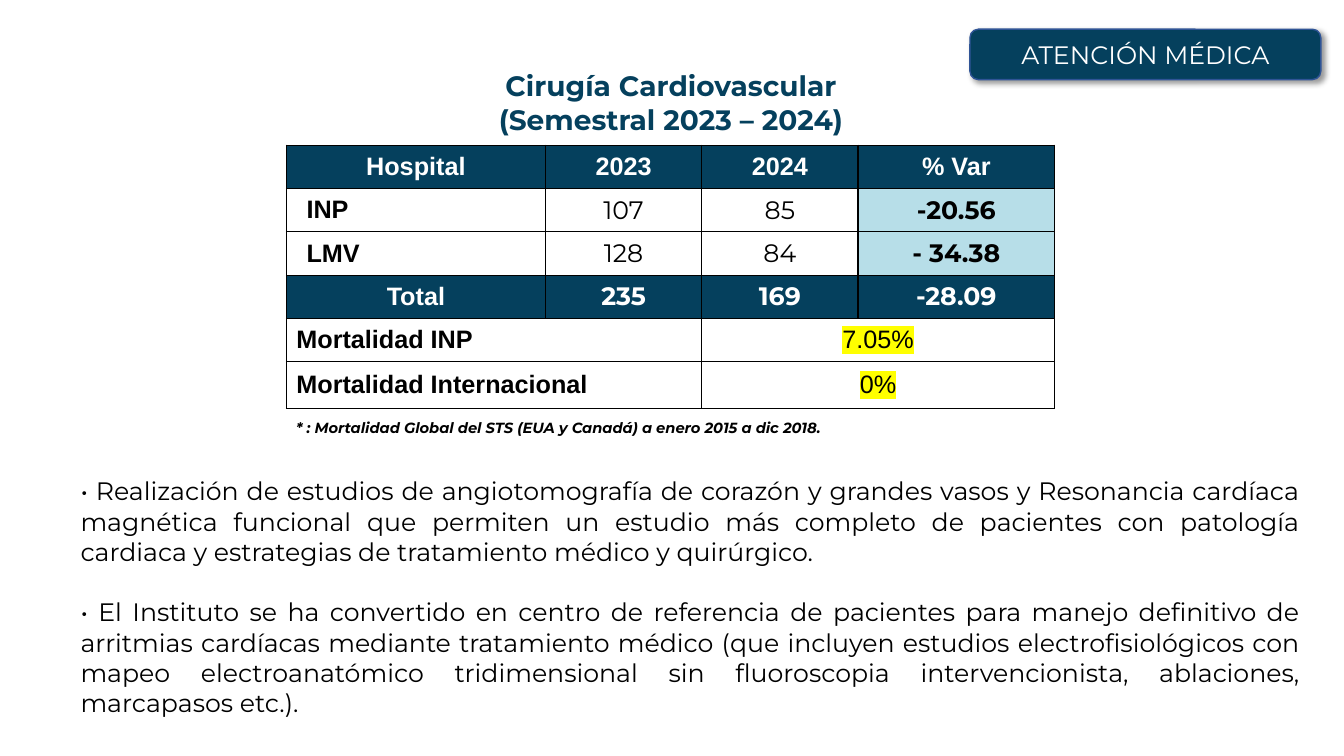
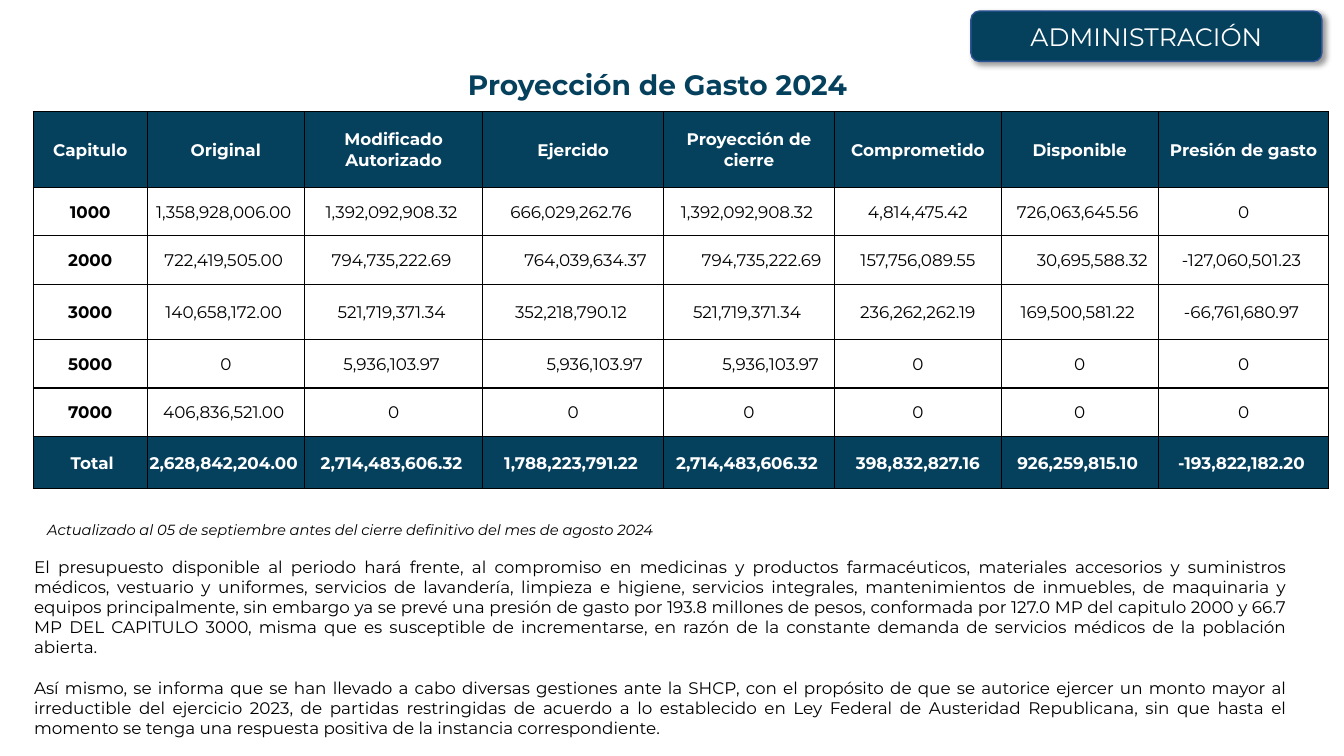
from dataclasses import dataclass
from typing import NamedTuple

from lxml import etree
from pptx import Presentation
from pptx.dml.color import RGBColor
from pptx.enum.shapes import MSO_SHAPE
from pptx.enum.text import MSO_ANCHOR, PP_ALIGN
from pptx.oxml.ns import qn
from pptx.util import Emu, Pt

ROUNDED = MSO_SHAPE.ROUNDED_RECTANGLE
LEFT, CENTER, JUSTIFY = PP_ALIGN.LEFT, PP_ALIGN.CENTER, PP_ALIGN.JUSTIFY
TOP, MIDDLE = MSO_ANCHOR.TOP, MSO_ANCHOR.MIDDLE
EMU_PER_PX = 9144


@dataclass(frozen=True)
class Theme:
    """Colours, fonts and type sizes shared by the slides."""
    navy: str = "05405D"
    badge_line: str = "2F5496"
    pale_blue: str = "B7DEE8"
    yellow: str = "FFFF00"
    white: str = "FFFFFF"
    black: str = "000000"
    font: str = "Montserrat"
    label_font: str = "Arial"
    title_size: float = 20
    large_size: float = 18
    small_size: float = 12
    note_size: float = 10.5


THEME = Theme()


class Box(NamedTuple):
    """A rectangle in px."""
    left: int
    top: int
    width: int
    height: int


class TextStyle(NamedTuple):
    """The look of a paragraph."""
    size: float
    color: str = THEME.black
    bold: bool = False
    italic: bool = False
    align: PP_ALIGN = LEFT
    font: str = THEME.font
    space_between: float = 0


class CellStyle(NamedTuple):
    """The look of a table cell; margins run left, top, right, bottom in px."""
    text: TextStyle
    margins: tuple
    fill: str = THEME.white
    highlight: str = ""


def px(length):
    """Turn px into EMU."""
    return Emu(length * EMU_PER_PX)


def rgb(color):
    """Turn a hex string into a colour."""
    return RGBColor.from_string(color)


def add_color(parent, tag, color):
    """Append an element that holds one colour and return the colour element."""
    holder = etree.SubElement(parent, qn(tag))
    return etree.SubElement(holder, qn("a:srgbClr"), val=color)


def write_text(frame, paragraphs, style, anchor=TOP):
    """Fill a text frame with paragraphs of one style."""
    frame.word_wrap = True
    frame.vertical_anchor = anchor
    for index, text in enumerate(paragraphs):
        paragraph = frame.add_paragraph() if index else frame.paragraphs[0]
        paragraph.text = text
        paragraph.alignment = style.align
        if index and style.space_between:
            paragraph.space_before = Pt(style.space_between)
        font = paragraph.font
        font.name, font.size = style.font, Pt(style.size)
        font.bold, font.italic = style.bold, style.italic
        font.color.rgb = rgb(style.color)


def add_text(slide, box, paragraphs, style):
    """Add a text box."""
    shape = slide.shapes.add_textbox(*map(px, box))
    write_text(shape.text_frame, paragraphs, style)


def add_title(slide, box, lines):
    """Add the centred slide title."""
    add_text(slide, box, lines, TextStyle(THEME.title_size, THEME.navy, bold=True, align=CENTER))


def add_badge(slide, box, text):
    """Add the rounded section badge with its soft shadow."""
    shape = slide.shapes.add_shape(ROUNDED, *map(px, box))
    shape.shadow.inherit = False
    shape.fill.solid()
    shape.fill.fore_color.rgb = rgb(THEME.navy)
    shape.line.color.rgb = rgb(THEME.badge_line)
    shape.line.width = Pt(1)
    effects = shape._element.spPr.find(qn("a:effectLst"))
    shadow = etree.SubElement(effects, qn("a:outerShdw"), blurRad=str(Pt(4)), dist=str(Pt(3)),
                              dir="2700000", algn="tl", rotWithShape="0")
    color = etree.SubElement(shadow, qn("a:srgbClr"), val=THEME.black)
    etree.SubElement(color, qn("a:alpha"), val="40000")
    write_text(shape.text_frame, [text],
               TextStyle(THEME.large_size, THEME.white, align=CENTER), MIDDLE)


def style_cell(cell, text, style):
    """Write one cell with its borders, fill and margins."""
    properties = cell._tc.get_or_add_tcPr()
    for side in ("a:lnL", "a:lnR", "a:lnT", "a:lnB"):
        line = etree.SubElement(properties, qn(side), w=str(Pt(1)))
        add_color(line, "a:solidFill", THEME.black)
    cell.fill.solid()
    cell.fill.fore_color.rgb = rgb(style.fill)
    cell.margin_left, cell.margin_top, cell.margin_right, cell.margin_bottom = map(px, style.margins)
    write_text(cell.text_frame, [text], style.text)
    cell.vertical_anchor = MIDDLE
    if style.highlight:
        run = cell.text_frame.paragraphs[0].runs[0]
        add_color(run._r.get_or_add_rPr(), "a:highlight", style.highlight)


def add_grid(slide, left, top, widths, heights, values, style_of, merges=()):
    """Add a table whose cell looks come from style_of(row, column, text)."""
    box = Box(left, top, sum(widths), sum(heights))
    table = slide.shapes.add_table(len(heights), len(widths), *map(px, box)).table
    table.first_row = table.horz_banding = False
    for column, width in zip(table.columns, widths):
        column.width = px(width)
    for row, height in zip(table.rows, heights):
        row.height = px(height)
    for row_index, row in enumerate(values):
        for column_index, text in enumerate(row):
            style_cell(table.cell(row_index, column_index), text,
                       style_of(row_index, column_index, text))
    for row_index, first, last in merges:
        table.cell(row_index, first).merge(table.cell(row_index, last))


SURGERIES = [
    ["Hospital", "2023", "2024", "% Var"],
    ["INP", "107", "85", "-20.56"],
    ["LMV", "128", "84", "- 34.38"],
    ["Total", "235", "169", "-28.09"],
    ["Mortalidad INP", "", "7.05%", ""],
    ["Mortalidad Internacional", "", "0%", ""],
]


def surgery_style(row, column, text):
    """Choose the look of a cell in the surgery table."""
    band = row in (0, 3)
    mortality = row > 3
    hospital = row in (1, 2)
    label = column == 0
    style = TextStyle(
        THEME.large_size,
        THEME.white if band else THEME.black,
        bold=band or label or (hospital and column == 3),
        align=LEFT if label and not band else CENTER,
        font=THEME.label_font if row == 0 or label or mortality else THEME.font,
    )
    fill = THEME.navy if band else THEME.pale_blue if hospital and column == 3 else THEME.white
    margins = (20 if hospital and label else 10, 5, 10, 5)
    highlight = THEME.yellow if mortality and text and not label else ""
    return CellStyle(style, margins, fill, highlight)


EXPENSES = [
    ["Capitulo", "Original", "Modificado Autorizado", "Ejercido", "Proyección de cierre",
     "Comprometido", "Disponible", "Presión de gasto"],
    ["1000", "1,358,928,006.00", "1,392,092,908.32", "666,029,262.76", "1,392,092,908.32",
     "4,814,475.42", "726,063,645.56", "0"],
    ["2000", "722,419,505.00", "794,735,222.69", "764,039,634.37", "794,735,222.69",
     "157,756,089.55", "30,695,588.32", "-127,060,501.23"],
    ["3000", "140,658,172.00", "521,719,371.34", "352,218,790.12", "521,719,371.34",
     "236,262,262.19", "169,500,581.22", "-66,761,680.97"],
    ["5000", "0", "5,936,103.97", "5,936,103.97", "5,936,103.97", "0", "0", "0"],
    ["7000", "406,836,521.00", "0", "0", "0", "0", "0", "0"],
    ["Total", "2,628,842,204.00", "2,714,483,606.32", "1,788,223,791.22", "2,714,483,606.32",
     "398,832,827.16", "926,259,815.10", "-193,822,182.20"],
]
EXPENSE_INDENTS = {(2, 3): 30, (2, 4): 30, (2, 6): 30, (4, 3): 48, (4, 4): 48, (6, 0): 5}


def expense_style(row, column, text):
    """Choose the look of a cell in the expense table."""
    band = row in (0, len(EXPENSES) - 1)
    style = TextStyle(THEME.small_size, THEME.white if band else THEME.black,
                      bold=band or column == 0, align=CENTER)
    right = 5 if "." in text and column != 5 else 1
    margins = (EXPENSE_INDENTS.get((row, column), 1), 1, right, 0)
    return CellStyle(style, margins, THEME.navy if band else THEME.white)


def build_surgery_slide(slide):
    """Build the cardiovascular surgery slide."""
    add_grid(slide, 284, 144, [257, 155, 155, 195], [43] * 5 + [46], SURGERIES, surgery_style,
             [(row, first, first + 1) for row in (4, 5) for first in (0, 2)])
    add_title(slide, Box(332, 63, 667, 77), ["Cirugía Cardiovascular", "(Semestral 2023 – 2024)"])
    add_text(slide, Box(284, 411, 633, 29),
             ["* : Mortalidad Global del STS (EUA y Canadá) a enero 2015 a dic 2018."],
             TextStyle(THEME.note_size, bold=True, italic=True))
    add_badge(slide, Box(962, 29, 348, 50), "ATENCIÓN MÉDICA")
    add_text(slide, Box(70, 467, 1229, 252), [
        "• Realización de estudios de angiotomografía de corazón y grandes vasos y Resonancia "
        "cardíaca magnética funcional que permiten un estudio más completo de pacientes con "
        "patología cardiaca y estrategias de tratamiento médico y quirúrgico.",
        "• El Instituto se ha convertido en centro de referencia de pacientes para manejo "
        "definitivo de arritmias cardíacas mediante tratamiento médico (que incluyen estudios "
        "electrofisiológicos con mapeo electroanatómico tridimensional sin fluoroscopia "
        "intervencionista, ablaciones, marcapasos etc.).",
    ], TextStyle(THEME.large_size, align=JUSTIFY, space_between=21.6))


def build_expense_slide(slide):
    """Build the 2024 expense projection slide."""
    add_title(slide, Box(198, 62, 908, 41), ["Proyección de Gasto 2024"])
    add_text(slide, Box(24, 547, 1263, 192), [
        "El presupuesto disponible al periodo hará frente, al compromiso en medicinas y "
        "productos farmacéuticos, materiales accesorios y suministros médicos, vestuario y "
        "uniformes, servicios de lavandería, limpieza e higiene, servicios integrales, "
        "mantenimientos de inmuebles, de maquinaria y equipos principalmente, sin embargo ya se "
        "prevé una presión de gasto por 193.8 millones de pesos, conformada por 127.0 MP del "
        "capitulo 2000 y 66.7 MP DEL CAPITULO 3000, misma que es susceptible de incrementarse, "
        "en razón de la constante demanda de servicios médicos de la población abierta.",
        "Así mismo, se informa que se han llevado a cabo diversas gestiones ante la SHCP, con el "
        "propósito de que se autorice ejercer un monto mayor al irreductible del ejercicio 2023, "
        "de partidas restringidas de acuerdo a lo establecido en Ley Federal de Austeridad "
        "Republicana, sin que hasta el momento se tenga una respuesta positiva de la instancia "
        "correspondiente.",
    ], TextStyle(THEME.small_size, align=JUSTIFY, space_between=14.4))
    add_badge(slide, Box(963, 11, 348, 50), "ADMINISTRACIÓN")
    add_grid(slide, 33, 111, [113, 156, 177, 179, 170, 165, 156, 169],
             [75, 48, 48, 55, 48, 48, 52], EXPENSES, expense_style)
    add_text(slide, Box(37, 512, 664, 29),
             ["Actualizado al 05 de septiembre antes del cierre definitivo del mes de agosto 2024"],
             TextStyle(THEME.note_size, italic=True))


def main():
    """Build and save the presentation."""
    presentation = Presentation()
    presentation.slide_width, presentation.slide_height = px(1333), px(750)
    blank = presentation.slide_layouts[6]
    for build in (build_surgery_slide, build_expense_slide):
        build(presentation.slides.add_slide(blank))
    presentation.save("out.pptx")


if __name__ == "__main__":
    main()
